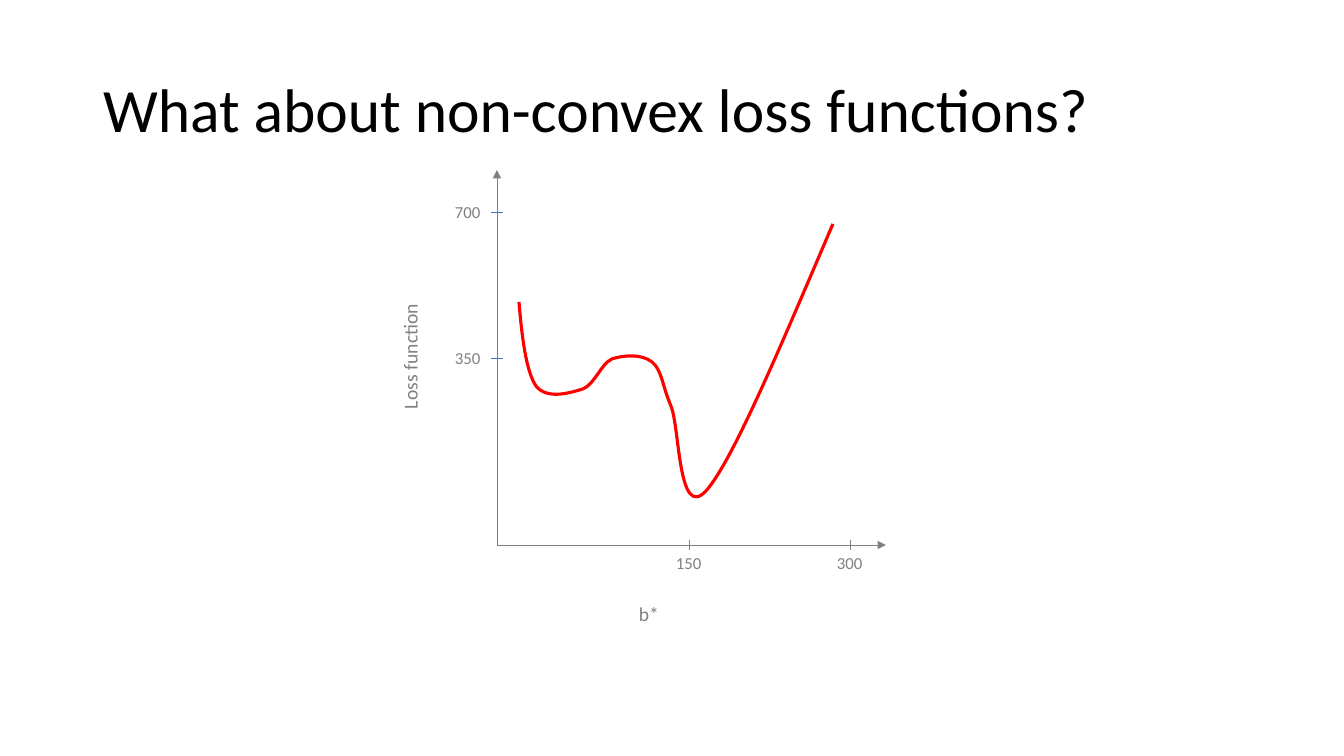
from lxml import etree
from pptx import Presentation
from pptx import util as u
from pptx.dml.color import RGBColor
from pptx.enum import shapes, text
from pptx.oxml.ns import qn

PX = 914400 / 100.8
BLACK = RGBColor(0x00, 0x00, 0x00)
GREY = RGBColor(0x80, 0x80, 0x80)
BLUE = RGBColor(0x44, 0x72, 0xC4)
RED = RGBColor(0xFF, 0x00, 0x00)

ORIGIN = (497, 545)
X_TICKS = {"150": 689, "300": 850}
Y_TICKS = {"700": 212, "350": 358}
START = (519, 302)
CURVE = [
    (522, 337), (526, 371), (536, 386),
    (547, 400), (570, 393), (583, 389),
    (595, 384), (601, 364), (612, 359),
    (624, 355), (642, 354), (652, 362),
    (662, 370), (662, 385), (671, 406),
    (680, 428), (678, 521), (706, 491),
    (733, 461), (782, 343), (833, 224),
]


def emu(*px):
    return [u.Emu(round(n * PX)) for n in px]


class Plot:
    face = "Calibri"

    def __init__(self, deck):
        self.slide = deck.slides.add_slide(deck.slide_layouts[5])
        self.group = self.slide.shapes.add_group_shape()

    def font(self, par, size, color):
        par.font.name = self.face
        par.font.size = u.Pt(size)
        par.font.color.rgb = color

    def title(self, words, *box):
        shape = self.slide.shapes.title
        shape.left, shape.top, shape.width, shape.height = emu(*box)
        frame = shape.text_frame
        frame.text = words
        frame.auto_size = text.MSO_AUTO_SIZE.NONE
        frame.vertical_anchor = text.MSO_ANCHOR.MIDDLE
        par = frame.paragraphs[0]
        par.alignment = text.PP_ALIGN.LEFT
        par.line_spacing = 0.9
        self.font(par, 44, BLACK)

    def label(self, words, size, *box, turn=0):
        shape = self.group.shapes.add_textbox(*emu(*box))
        shape.rotation = turn
        frame = shape.text_frame
        frame.text = words
        frame.word_wrap = False
        frame.auto_size = text.MSO_AUTO_SIZE.SHAPE_TO_FIT_TEXT
        self.font(frame.paragraphs[0], size, GREY)

    def line(self, start, end, color=GREY, arrow=False):
        link = self.group.shapes.add_connector(
            shapes.MSO_CONNECTOR.STRAIGHT, *emu(*start, *end))
        link.line.color.rgb = color
        link.line.width = u.Pt(0.5)
        props = link._element.spPr
        if arrow:
            etree.SubElement(props.find(qn("a:ln")), qn("a:tailEnd"), type="triangle")
        etree.SubElement(props, qn("a:effectLst"))

    def curve(self, start, points):
        pen = self.slide.shapes.build_freeform(*emu(*start))
        pen.add_line_segments([emu(*p) for p in points], close=False)
        shape = pen.convert_to_shape()
        shape.shadow.inherit = False
        shape.fill.background()
        shape.line.color.rgb = RED
        shape.line.width = u.Pt(2.25)
        steps = list(shape._element.iter(qn("a:lnTo")))
        for i in range(0, len(steps), 3):
            bend = etree.Element(qn("a:cubicBezTo"))
            steps[i].addprevious(bend)
            for step in steps[i:i + 3]:
                bend.append(step[0])
                step.getparent().remove(step)


def main():
    deck = Presentation()
    deck.slide_width, deck.slide_height = emu(1344, 756)
    plot = Plot(deck)
    plot.title("What about non-convex loss functions?", 93, 40, 1159, 146)

    left, base = ORIGIN
    plot.line(ORIGIN, (left, 170), arrow=True)
    plot.line(ORIGIN, (886, base), arrow=True)
    plot.label("b*", 14, 629, 597, 40, 34)
    plot.label("Loss function", 14, 347, 339, 126, 34, turn=270)
    for words, x in X_TICKS.items():
        plot.line((x, base - 5), (x, base + 5))
        plot.label(words, 12, x - 23, base + 3, 46, 30)
    for words, y in Y_TICKS.items():
        plot.line((left + 6, y), (left - 6, y), BLUE)
        plot.label(words, 12, left - 52, y - 15, 46, 30)

    plot.curve(START, CURVE)
    deck.save("out.pptx")


if __name__ == "__main__":
    main()
